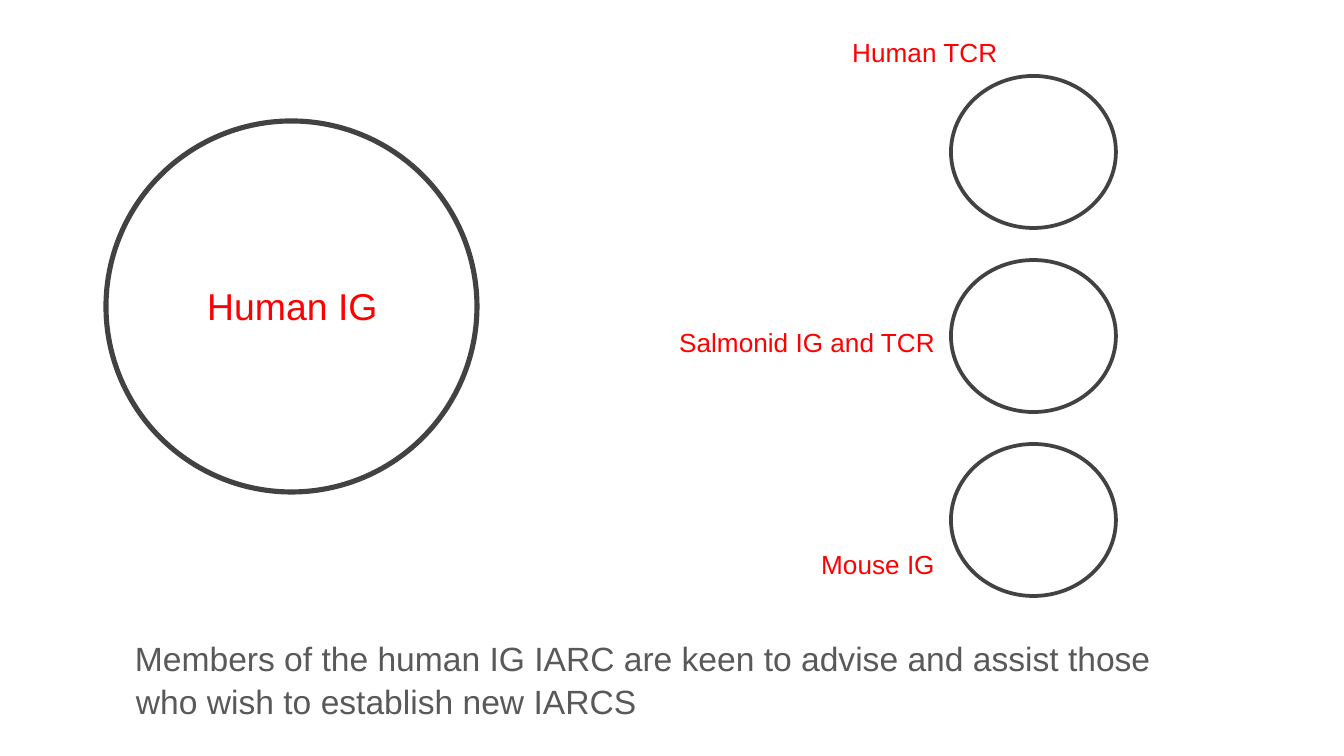
"""Build a slide of the human IG group beside three newer receptor groups."""
from lxml import etree
from pptx import Presentation
from pptx.dml.color import RGBColor
from pptx.enum.shapes import MSO_SHAPE
from pptx.enum.text import MSO_ANCHOR, MSO_AUTO_SIZE
from pptx.oxml.ns import qn
from pptx.util import Emu, Pt

OVAL = MSO_SHAPE.OVAL
MIDDLE = MSO_ANCHOR.MIDDLE
NO_FIT = MSO_AUTO_SIZE.NONE
GROW = MSO_AUTO_SIZE.SHAPE_TO_FIT_TEXT

EMU_PER_PX = 914400 / 134.4
SLIDE_SIZE = (1344, 756)
FONT = "Arial"
COLORS = {"outline": "424242", "label": "FF0000", "message": "595959"}

MESSAGE = ("Members of the human IG IARC are keen to advise and assist those "
           "who wish to establish new IARCS")
MESSAGE_BOX = (56, 645, 1132, 67)
MESSAGE_INSET, MESSAGE_INDENT, MESSAGE_HANG = 13, 67, -1

MAIN_CIRCLE = (106, 121, 371, 371)
MAIN_LABEL = ("Human IG", 20, (194, 277, 199, 59))

GROUP_LABELS = [
    ("Human TCR", 14, (839, 30, 173, 46)),
    ("Salmonid IG and TCR", 14, (666, 320, 285, 46)),
    ("Mouse IG", 14, (808, 542, 141, 46)),
]
GROUP_LEFT, GROUP_TOP, GROUP_PITCH = 951, 76, 184
GROUP_SIZE = (165, 152)


def px(length):
    return Emu(round(length * EMU_PER_PX))


def style(paragraph, size, color):
    paragraph.font.name = FONT
    paragraph.font.size = Pt(size)
    paragraph.font.color.rgb = RGBColor.from_string(COLORS[color])


def add_circle(slide, box, weight):
    circle = slide.shapes.add_shape(OVAL, *map(px, box))
    circle.shadow.inherit = False
    circle.fill.background()
    circle.line.color.rgb = RGBColor.from_string(COLORS["outline"])
    circle.line.width = Pt(weight)


def add_label(slide, text, size, box):
    frame = slide.shapes.add_textbox(*map(px, box)).text_frame
    frame.word_wrap = False
    frame.auto_size = GROW
    frame.text = text
    style(frame.paragraphs[0], size, "label")


def fill_message(message):
    message.left, message.top, message.width, message.height = map(px, MESSAGE_BOX)
    frame = message.text_frame
    frame.text = MESSAGE
    frame.auto_size = NO_FIT
    frame.vertical_anchor = MIDDLE
    frame.margin_left = frame.margin_right = px(MESSAGE_INSET)
    frame.margin_top = frame.margin_bottom = px(MESSAGE_INSET)
    paragraph = frame.paragraphs[0]
    style(paragraph, 18, "message")
    paragraph.space_before = Pt(0)
    paragraph.line_spacing = 1.06
    properties = paragraph._p.get_or_add_pPr()
    properties.set("marL", str(px(MESSAGE_INDENT)))
    properties.set("indent", str(px(MESSAGE_HANG)))
    no_bullet = etree.SubElement(properties, qn("a:buNone"))
    properties.find(qn("a:defRPr")).addprevious(no_bullet)


def main():
    deck = Presentation()
    deck.slide_width, deck.slide_height = map(px, SLIDE_SIZE)
    slide = deck.slides.add_slide(deck.slide_layouts[1])
    title = slide.shapes.title.element
    title.getparent().remove(title)

    fill_message(slide.placeholders[1])
    add_circle(slide, MAIN_CIRCLE, 2.75)
    add_label(slide, *MAIN_LABEL)
    for row, group_label in enumerate(GROUP_LABELS):
        top = GROUP_TOP + row * GROUP_PITCH
        add_circle(slide, (GROUP_LEFT, top, *GROUP_SIZE), 2)
        add_label(slide, *group_label)

    deck.save("out.pptx")


if __name__ == "__main__":
    main()
